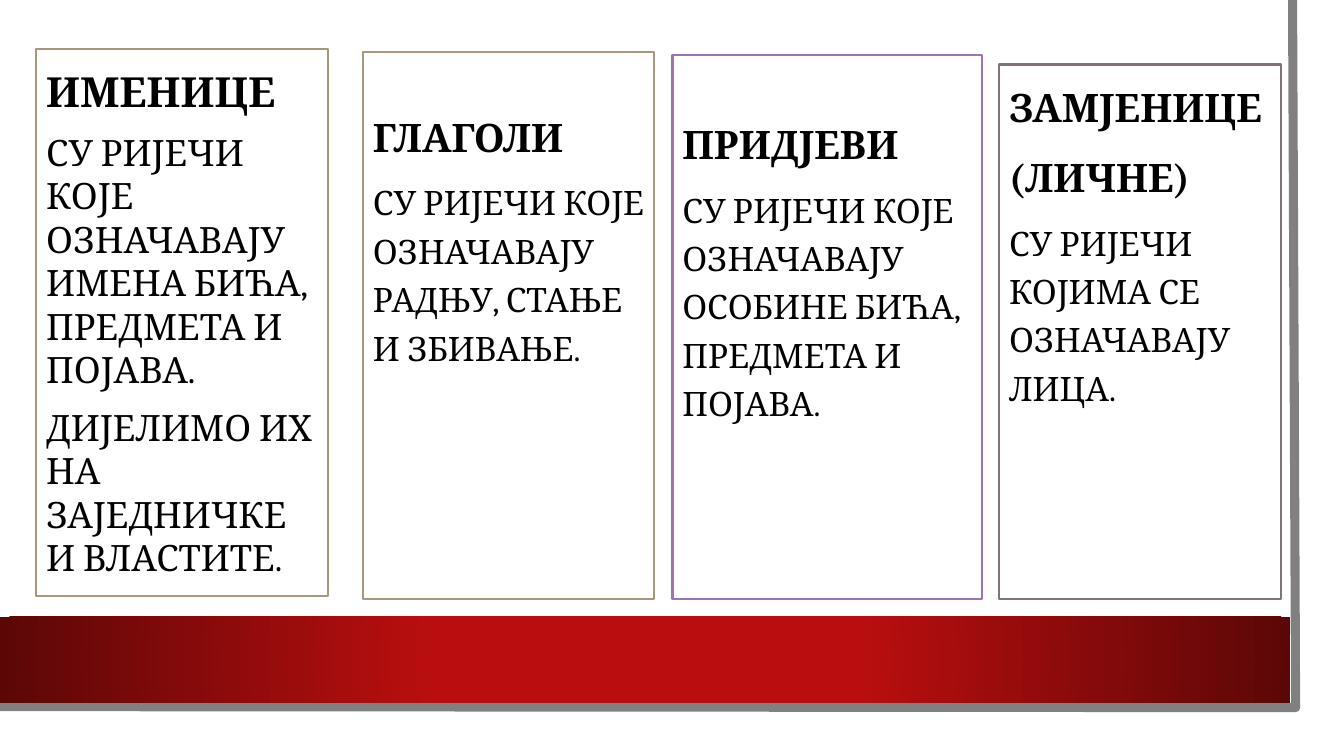
from lxml import etree
from pptx import Presentation
from pptx.dml.color import RGBColor
from pptx.enum import shapes, text
from pptx.oxml import ns
from pptx.util import Inches, Pt

WHITE = RGBColor(0xFF, 0xFF, 0xFF)
BLACK = RGBColor(0, 0, 0)
GREY = RGBColor(0x80, 0x80, 0x80)
SAND = RGBColor(0xA6, 0x98, 0x7D)
PURPLE = RGBColor(0x9B, 0x75, 0xB2)
MAUVE = RGBColor(0x80, 0x73, 0x7A)
RED = RGBColor(0xB8, 0x0E, 0x0F)
DARK_RED = RGBColor(0x5C, 0x07, 0x07)


def write_para(para, words, size, bold=False, spacing=1.0, before=0, font="Cambria"):
    para.alignment = text.PP_ALIGN.LEFT
    para.line_spacing = spacing
    para.space_before = Pt(before)
    span = para.add_run()
    span.text = words
    span.font.name = font
    span.font.size = Pt(size)
    span.font.bold = bold
    span.font.color.rgb = BLACK


class Page:
    def __init__(self, deck):
        self.shapes = deck.slides.add_slide(deck.slide_layouts[6]).shapes

    def panel(self, left, top, width, height, line=None):
        box = self.shapes.add_shape(shapes.MSO_SHAPE.RECTANGLE, Inches(left),
                                    Inches(top), Inches(width), Inches(height))
        box.shadow.inherit = False
        box.fill.solid()
        box.fill.fore_color.rgb = WHITE
        if line is None:
            box.line.fill.background()
        else:
            box.line.color.rgb = line
            box.line.width = Pt(1.5)
        return box

    def edge(self, points, color, width):
        start, *rest = [(Inches(x), Inches(y)) for x, y in points]
        builder = self.shapes.build_freeform(*start)
        builder.add_line_segments(rest, close=False)
        outline = builder.convert_to_shape()
        outline.shadow.inherit = False
        outline.fill.background()
        outline.line.color.rgb = color
        outline.line.width = Pt(width)

    def band(self, left, top, width, height, inner, outer):
        box = self.panel(left, top, width, height)
        box.fill.gradient()
        for stop, color, position in zip(box.fill.gradient_stops,
                                         (inner, outer), (0.34, 1)):
            stop.color.rgb = color
            stop.position = position
        # Radial gradient from the centre
        gradient = box.fill._xPr.find(ns.qn("a:gradFill"))
        gradient.remove(gradient.find(ns.qn("a:lin")))
        radial = etree.Element(ns.qn("a:path"), {"path": "circle"})
        sides = dict.fromkeys("ltrb", "50000")
        etree.SubElement(radial, ns.qn("a:fillToRect"), sides)
        gradient.find(ns.qn("a:gsLst")).addnext(radial)

    def card(self, place, line, headings, bodies, sizes=(28, 24), spacing=1.2, inset=None):
        frame = self.panel(*place, line=line).text_frame
        frame.word_wrap = True
        if inset is None:
            frame.vertical_anchor = text.MSO_ANCHOR.MIDDLE
        else:
            frame.vertical_anchor = text.MSO_ANCHOR.TOP
            frame.margin_top = Inches(inset)
        lines = [(words, sizes[0], True) for words in headings]
        lines += [(words, sizes[1], False) for words in bodies]
        for index, (words, size, bold) in enumerate(lines):
            para = frame.add_paragraph() if index else frame.paragraphs[0]
            write_para(para, words, size, bold=bold, spacing=spacing,
                       before=10 if index else 0)


def main():
    deck = Presentation()
    deck.slide_width, deck.slide_height = Inches(13.33), Inches(7.5)
    page = Page(deck)

    # Sheet, grey edge and red band
    page.panel(0, 0, 13.1, 7.27)
    page.edge([(12.82, 0), (12.85, 7.02), (-0.03, 7.01)], GREY, 6.5)
    page.band(0, 6.12, 12.8, 0.85, RED, DARK_RED)

    # Word classes
    page.card((3.6, 0.52, 2.89, 5.42), SAND, ["ГЛАГОЛИ"],
              ["СУ РИЈЕЧИ КОЈЕ ОЗНАЧАВАЈУ РАДЊУ, СТАЊЕ И ЗБИВАЊЕ."], inset=0.51)
    page.card((6.67, 0.55, 3.07, 5.39), PURPLE, ["ПРИДЈЕВИ"],
              ["СУ РИЈЕЧИ КОЈЕ ОЗНАЧАВАЈУ ОСОБИНЕ БИЋА, ПРЕДМЕТА И ПОЈАВА."],
              inset=0.55)
    page.card((9.91, 0.64, 2.8, 5.3), MAUVE, ["ЗАМЈЕНИЦЕ", "(ЛИЧНЕ)"],
              ["СУ РИЈЕЧИ КОЈИМА СЕ ОЗНАЧАВАЈУ ЛИЦА."], inset=0.09)
    page.card((0.36, 0.49, 2.89, 5.42), SAND, ["ИМЕНИЦЕ"],
              ["СУ РИЈЕЧИ КОЈЕ ОЗНАЧАВАЈУ ИМЕНА БИЋА, ПРЕДМЕТА И ПОЈАВА.",
               "ДИЈЕЛИМО ИХ НА ЗАЈЕДНИЧКЕ И ВЛАСТИТЕ."],
              sizes=(29.6, 25.9), spacing=1.0)

    deck.save("out.pptx")


if __name__ == "__main__":
    main()
